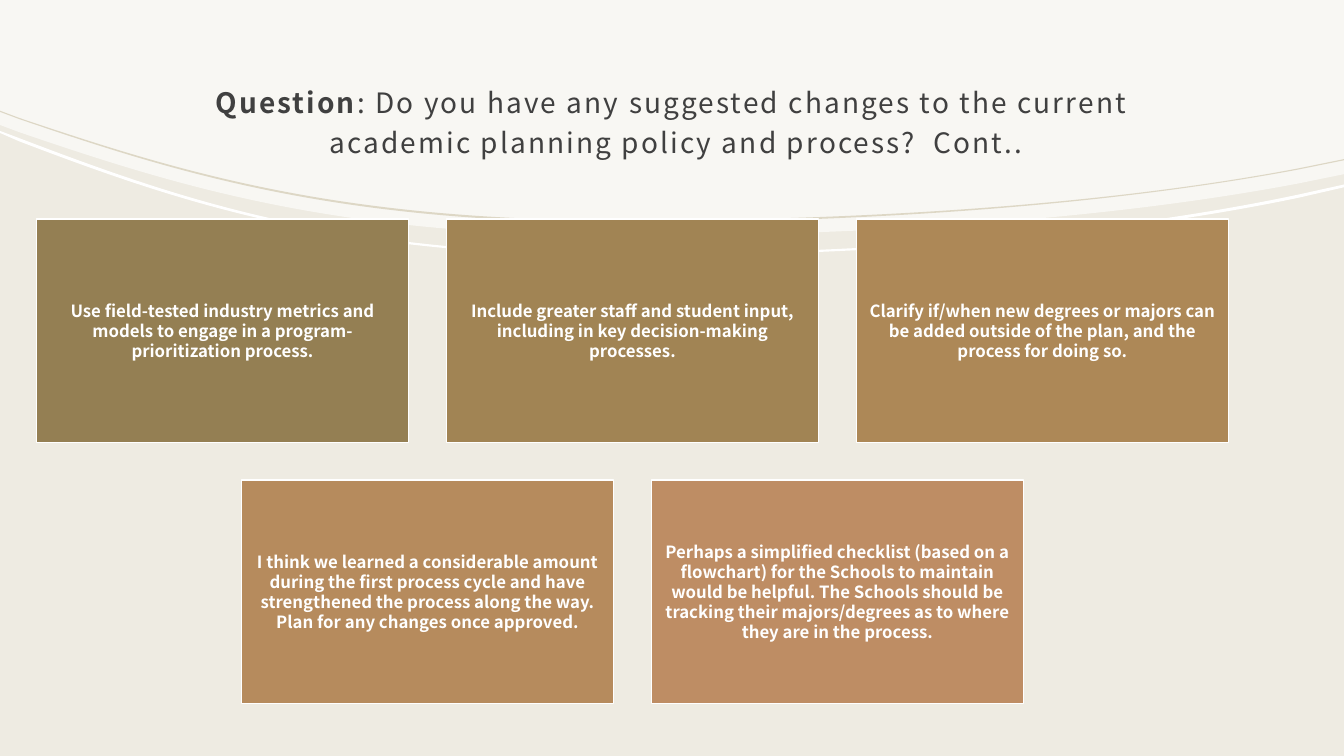
from lxml.etree import SubElement
from pptx import Presentation
from pptx.dml.color import RGBColor
from pptx.enum.shapes import MSO_SHAPE as Preset
from pptx.enum.text import MSO_ANCHOR as Anchor, MSO_AUTO_SIZE as AutoSize, PP_ALIGN as Align
from pptx.oxml.ns import qn
from pptx.util import Cm, Pt

FONT = "Noto Sans CJK JP"
BACKGROUND = RGBColor(0xEE, 0xEB, 0xE2)
WHITE = RGBColor(0xFF, 0xFF, 0xFF)
TAN = RGBColor(0xDD, 0xD7, 0xC5)
TITLE_GREY = RGBColor(0x40, 0x40, 0x40)

SLIDE_W, SLIDE_H = 33.87, 19.05

# Curved edges: one shared list of x values, one list of heights per edge (cm).
# Points 1 to 4 and 4 to 7 are Bézier segments; both ends are straight.
EDGE_X = (0, 0.48, 4.55, 8.46, 15.75, 22.23, 28.17, 32.74, SLIDE_W)
PANEL_EDGE = (3.15, 3.33, 4.72, 5.94, 5.94, 5.94, 5.49, 4.62, 4.39)
WHITE_UPPER = (3.3, 3.48, 5.03, 6.4, 6.4, 6.4, 5.87, 4.9, 4.65)
WHITE_LOWER = (3.35, 3.56, 5.11, 6.45, 6.45, 6.45, 5.94, 4.98, 4.72)
TAN_UPPER = (2.79, 2.97, 4.34, 5.56, 5.56, 5.56, 5.11, 4.24, 4.01)
TAN_LOWER = (2.82, 3, 4.39, 5.61, 5.61, 5.61, 5.13, 4.27, 4.04)
# Index of the first control point of each curve in an outline
EDGE_CURVES = (2, 5)
RETURN_CURVES = (11, 14)

# Cards: each row is centred on the same axis
CARD_W, CARD_H = 9.38, 5.63
PITCH_X, PITCH_Y = 10.33, 6.58
GRID_LEFT, GRID_TOP = 0.92, 5.52
CARD_ROWS = (
    (
        ("Use field-tested industry metrics and models to engage in a "
         "program-prioritization process.", RGBColor(0x94, 0x7F, 0x53)),
        ("Include greater staff and student input, including in key "
         "decision-making processes.", RGBColor(0xA1, 0x84, 0x54)),
        ("Clarify if/when new degrees or majors can be added outside of the "
         "plan, and the process for doing so.", RGBColor(0xAD, 0x88, 0x57)),
    ),
    (
        ("I think we learned a considerable amount during the first process "
         "cycle and have strengthened the process along the way. Plan for any "
         "changes once approved.", RGBColor(0xB6, 0x8B, 0x5D)),
        ("Perhaps a simplified checklist (based on a flowchart) for the "
         "Schools to maintain would be helpful. The Schools should be tracking "
         "their majors/degrees as to where they are in the process.",
         RGBColor(0xBE, 0x8D, 0x64)),
    ),
)


def edge(heights):
    return list(zip(EDGE_X, heights))


def bend(outline, curve_starts):
    """Turn three straight segments from each start into one cubic curve."""
    segments = list(outline._element.find(".//" + qn("a:path")))
    for start in curve_starts:
        first, *others = segments[start:start + 3]
        first.tag = qn("a:cubicBezTo")
        for segment in others:
            first.append(segment[0])
            segment.getparent().remove(segment)


def add_outline(slide, points, curve_starts, color, opacity=100):
    start, *rest = [(Cm(x), Cm(y)) for x, y in points]
    builder = slide.shapes.build_freeform(*start)
    builder.add_line_segments(rest, close=True)
    outline = builder.convert_to_shape()
    bend(outline, curve_starts)
    outline.shadow.inherit = False
    outline.fill.solid()
    outline.fill.fore_color.rgb = color
    outline.line.fill.background()
    if opacity < 100:
        tint = outline._element.spPr.find(qn("a:solidFill"))[0]
        SubElement(tint, qn("a:alpha")).set("val", str(opacity * 1000))


def add_band(slide, upper, lower, color):
    add_outline(slide, edge(upper) + edge(lower)[::-1], EDGE_CURVES + RETURN_CURVES, color)


def set_title(slide):
    title = slide.shapes.title
    title.left, title.top, title.width, title.height = Cm(3.39), Cm(1.52), Cm(27.1), Cm(2.9)
    frame = title.text_frame
    frame.word_wrap = True
    frame.auto_size = AutoSize.NONE
    frame.vertical_anchor = Anchor.MIDDLE
    frame.margin_left = frame.margin_right = frame.margin_top = Cm(0.3)
    frame.margin_bottom = Cm(0.25)

    question = frame.paragraphs[0]
    question.alignment = Align.CENTER
    question.line_spacing = 1.2
    question.font.size = Pt(20)
    question.font.name = FONT
    question.font.color.rgb = TITLE_GREY
    question.add_run().text = "Question"
    question.add_run().text = ": Do you have any suggested changes to the current"
    question.add_line_break()
    question.add_run().text = " academic planning policy and process?  Cont.."
    for number, run in enumerate(question.runs):
        run.font.bold = number == 0
        run._r.get_or_add_rPr().set("spc", "150")

    # Bring the title in front of the curved panel
    slide.shapes._spTree.append(title._element)


def add_card(slide, left, top, text, color):
    card = slide.shapes.add_shape(Preset.RECTANGLE, Cm(left), Cm(top), Cm(CARD_W), Cm(CARD_H))
    card.shadow.inherit = False
    card.fill.solid()
    card.fill.fore_color.rgb = color
    card.line.color.rgb = WHITE
    card.line.width = Pt(1)
    frame = card.text_frame
    frame.word_wrap = True
    frame.vertical_anchor = Anchor.MIDDLE
    frame.margin_left = frame.margin_right = Cm(0.25)
    frame.margin_top = frame.margin_bottom = Cm(0.13)
    suggestion = frame.paragraphs[0]
    suggestion.text = text
    suggestion.alignment = Align.CENTER
    suggestion.font.size = Pt(12)
    suggestion.font.name = FONT
    suggestion.font.bold = True
    suggestion.font.color.rgb = WHITE


def main():
    deck = Presentation()
    deck.slide_width, deck.slide_height = Cm(SLIDE_W), Cm(SLIDE_H)
    slide = deck.slides.add_slide(deck.slide_layouts[5])
    slide.background.fill.solid()
    slide.background.fill.fore_color.rgb = BACKGROUND

    # Curved header
    panel = edge(PANEL_EDGE) + [(SLIDE_W, 0), (0, 0)]
    add_outline(slide, panel, EDGE_CURVES, WHITE, opacity=60)
    add_band(slide, WHITE_UPPER, WHITE_LOWER, WHITE)
    set_title(slide)
    add_band(slide, TAN_UPPER, TAN_LOWER, TAN)

    # Suggestion cards
    for row, cards in enumerate(CARD_ROWS):
        indent = (len(CARD_ROWS[0]) - len(cards)) * PITCH_X / 2
        for column, (text, color) in enumerate(cards):
            add_card(slide, GRID_LEFT + indent + column * PITCH_X,
                     GRID_TOP + row * PITCH_Y, text, color)

    deck.save("out.pptx")


if __name__ == "__main__":
    main()
